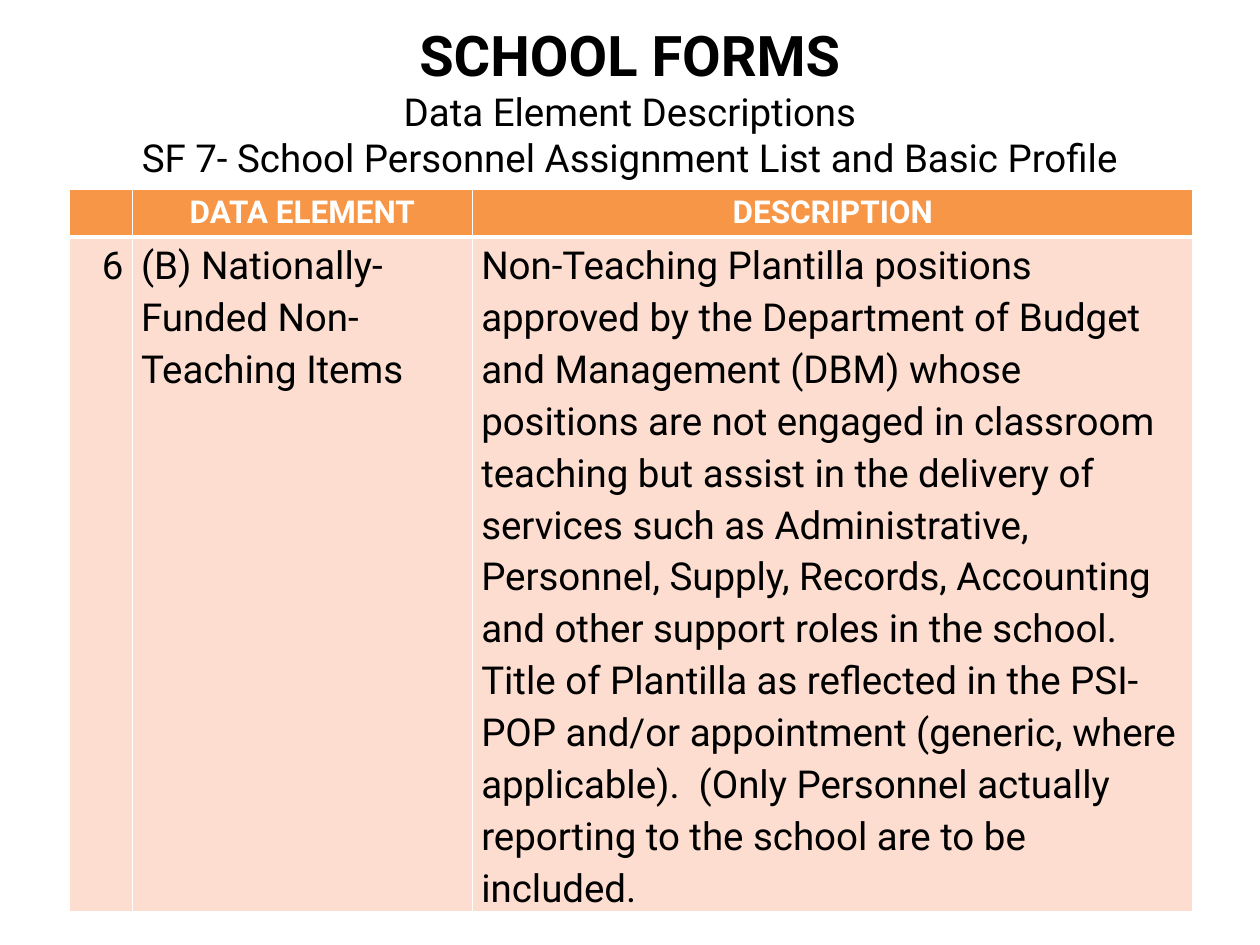
from dataclasses import dataclass

from lxml import etree
from pptx import Presentation
from pptx.dml.color import RGBColor
from pptx.enum import text as t
from pptx.oxml import ns
from pptx.util import Inches, Pt


@dataclass(frozen=True)
class Theme:
    font: str = "Roboto"
    ink: str = "000000"
    white: str = "FFFFFF"
    header: str = "F79646"
    body: str = "FCDDCF"
    heading_size: int = 32
    text_size: int = 22
    header_size: int = 18


THEME = Theme()
TITLE_LINES = (
    "Data Element Descriptions",
    "SF 7- School Personnel Assignment List and Basic Profile",
)
HEADER = ("", "DATA ELEMENT", "DESCRIPTION")
ELEMENT = (
    "6",
    "(B) Nationally-Funded Non-Teaching Items",
    "Non-Teaching Plantilla positions approved by the Department of Budget "
    "and Management (DBM) whose positions are not engaged in classroom "
    "teaching but assist in the delivery of services such as Administrative, "
    "Personnel, Supply, Records, Accounting and other support roles in the "
    "school. Title of Plantilla as reflected in the PSI-POP and/or "
    "appointment (generic, where applicable).  (Only Personnel actually "
    "reporting to the school are to be included.",
)
COLUMN_WIDTHS = (0.5, 2.7, 5.72)
ROW_HEIGHTS = (0.38, 5.08)


def write(paragraph, words, size=THEME.text_size, color=THEME.ink, bold=False,
          align=t.PP_ALIGN.LEFT, spacing=1.0):
    paragraph.alignment = align
    paragraph.line_spacing = spacing
    run = paragraph.add_run()
    run.text = words
    run.font.name = THEME.font
    run.font.size = Pt(size)
    run.font.bold = bold
    run.font.color.rgb = RGBColor.from_string(color)


def add_title(slide):
    title = slide.shapes.title
    title.left, title.top = Inches(0.5), Inches(0.17)
    title.width, title.height = Inches(9), Inches(1.25)
    frame = title.text_frame
    frame.auto_size = t.MSO_AUTO_SIZE.NONE
    frame.vertical_anchor = t.MSO_ANCHOR.MIDDLE
    write(frame.paragraphs[0], "SCHOOL FORMS", size=THEME.heading_size,
          bold=True, align=t.PP_ALIGN.CENTER)
    for line in TITLE_LINES:
        paragraph = frame.add_paragraph()
        paragraph.space_before = Pt(0)
        write(paragraph, line, align=t.PP_ALIGN.CENTER)


def set_borders(cell, widths):
    properties = cell._tc.get_or_add_tcPr()
    for side, width in zip("LRTB", widths):
        line = etree.SubElement(properties, ns.qn(f"a:ln{side}"), w=str(Pt(width)))
        fill = etree.SubElement(line, ns.qn("a:solidFill"))
        etree.SubElement(fill, ns.qn("a:srgbClr"), val=THEME.white)


def fill_cell(cell, words, fill, borders, **style):
    cell.margin_left = cell.margin_right = Inches(0.07)
    cell.margin_top = cell.margin_bottom = 0
    set_borders(cell, borders)
    cell.fill.solid()
    cell.fill.fore_color.rgb = RGBColor.from_string(fill)
    if words:
        write(cell.text_frame.paragraphs[0], words, spacing=1.15, **style)


def add_element_table(slide):
    table = slide.shapes.add_table(
        len(ROW_HEIGHTS), len(COLUMN_WIDTHS), Inches(0.55), Inches(1.5),
        Inches(sum(COLUMN_WIDTHS)), Inches(sum(ROW_HEIGHTS))).table
    for column, width in zip(table.columns, COLUMN_WIDTHS):
        column.width = Inches(width)
    for row, height in zip(table.rows, ROW_HEIGHTS):
        row.height = Inches(height)
    for index, (heading, detail) in enumerate(zip(HEADER, ELEMENT)):
        fill_cell(table.cell(0, index), heading, THEME.header, (1, 1, 1, 3),
                  size=THEME.header_size, color=THEME.white, bold=True,
                  align=t.PP_ALIGN.CENTER)
        fill_cell(table.cell(1, index), detail, THEME.body, (1, 1, 3, 1),
                  align=t.PP_ALIGN.LEFT if index else t.PP_ALIGN.RIGHT)


def main():
    deck = Presentation()
    deck.slide_width, deck.slide_height = Inches(10), Inches(7.5)
    slide = deck.slides.add_slide(deck.slide_layouts[5])
    add_title(slide)
    add_element_table(slide)
    deck.save("out.pptx")


if __name__ == "__main__":
    main()
